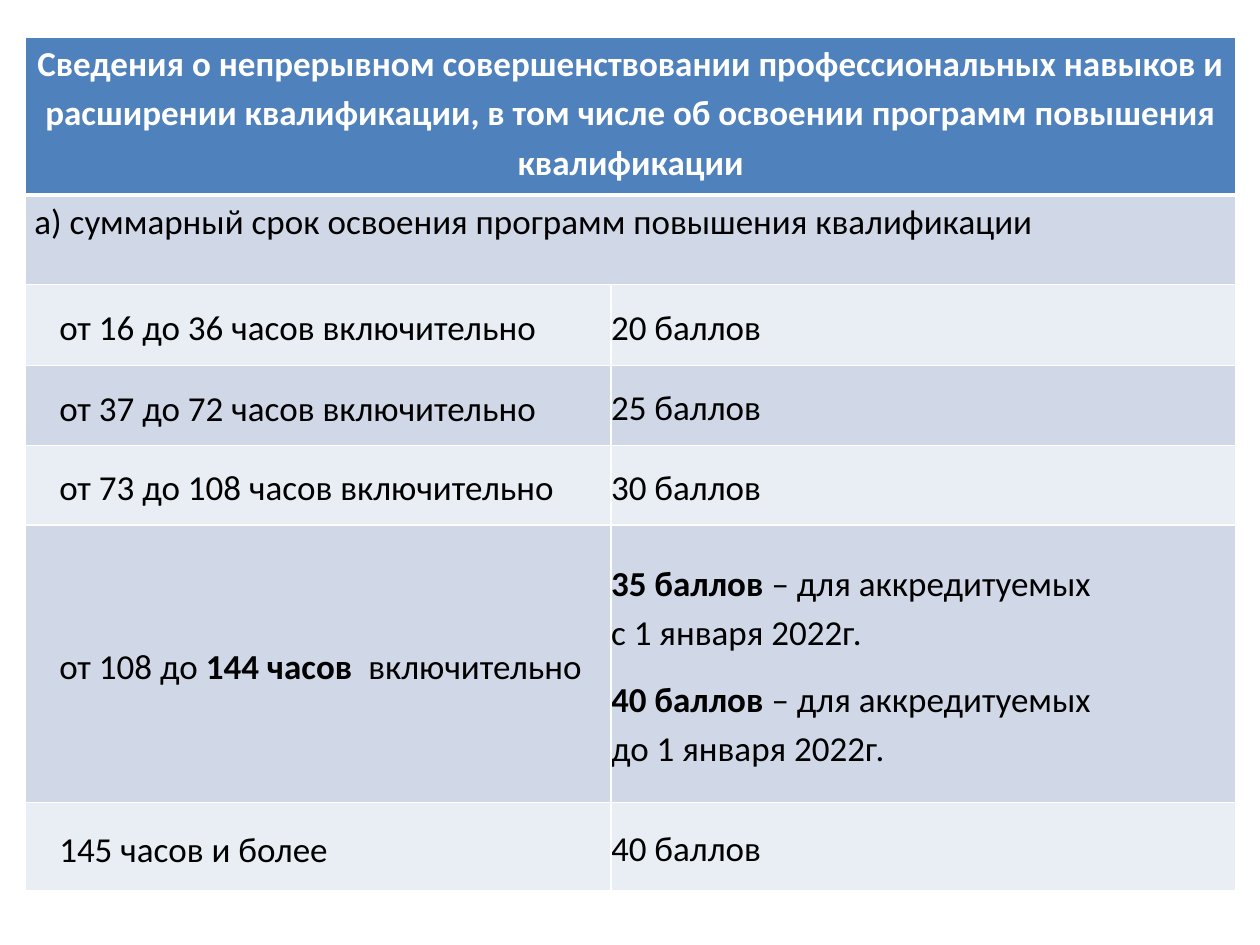
from lxml import etree
from pptx import Presentation
from pptx.dml.color import RGBColor
from pptx.enum.text import MSO_ANCHOR as ANCHOR, PP_ALIGN as ALIGN
from pptx.oxml.ns import qn
from pptx.util import Pt

TITLE = ("Сведения о непрерывном совершенствовании профессиональных навыков и "
         "расширении квалификации, в том числе об освоении программ повышения квалификации")
SUBTITLE = "а)\u00a0суммарный срок освоения программ повышения квалификации"

# Each cell is a list of paragraphs, each paragraph a list of (text, bold) runs.
SCORES = [
    ([[("от 16 до 36 часов включительно", False)]], [[("20 баллов", False)]]),
    ([[("от 37 до 72 часов включительно", False)]], [[("25 баллов", False)]]),
    ([[("от 73 до 108 часов включительно", False)]], [[("30 баллов", False)]]),
    ([[("от 108 до ", False), ("144 часов  ", True), ("включительно", False)]],
     [[("35 баллов ", True), ("– для аккредитуемых\nс 1 января 2022г.", False)],
      [("40 баллов ", True), ("– для аккредитуемых\nдо 1 января 2022г.", False)]]),
    ([[("145 часов и более", False)]], [[("40 баллов", False)]]),
]
COL_WIDTHS = [334.8, 357.2]
ROW_HEIGHTS = [90.5, 51, 46.5, 45.5, 45.5, 158.5, 50.5]
LEFT, TOP = 14.4, 21
PAD = 5.3
WHITE, BLACK, BLUE = "FFFFFF", "000000", "4F81BD"
BANDS = ["E9EDF4", "D0D8E8"]


def rgb(value):
    return RGBColor.from_string(value)


def set_borders(cell, **widths):
    """Draw white borders, 1 pt unless a side is given another width."""
    tc_pr = cell._tc.get_or_add_tcPr()
    for side in "LRTB":
        ln = etree.SubElement(tc_pr, qn(f"a:ln{side}"), w=str(Pt(widths.get(side, 1))))
        fill = etree.SubElement(ln, qn("a:solidFill"))
        etree.SubElement(fill, qn("a:srgbClr"), val=WHITE)


def write(cell, paragraphs, color=BLACK, align=ALIGN.LEFT, anchor=ANCHOR.MIDDLE,
          pad=PAD, top=0, indent=0, after=0):
    cell.margin_left = cell.margin_right = Pt(pad)
    cell.margin_top, cell.margin_bottom = Pt(top), 0
    cell.vertical_anchor = anchor
    tf = cell.text_frame
    for i, runs in enumerate(paragraphs):
        p = tf.add_paragraph() if i else tf.paragraphs[0]
        p.alignment, p.line_spacing, p.space_after = align, 1.15, Pt(after)
        if indent:
            p._p.get_or_add_pPr().set("indent", str(Pt(indent)))
        for text, bold in runs:
            for n, line in enumerate(text.split("\n")):
                if n:
                    p.add_line_break()
                r = p.add_run()
                r.text = line
                r.font.name, r.font.size, r.font.bold = "Calibri", Pt(20), bold
                r.font.color.rgb = rgb(color)


prs = Presentation()
prs.slide_width, prs.slide_height = Pt(720), Pt(540)
s = prs.slides.add_slide(prs.slide_layouts[6])
table = s.shapes.add_table(len(ROW_HEIGHTS), len(COL_WIDTHS), Pt(LEFT), Pt(TOP),
                           Pt(sum(COL_WIDTHS)), Pt(sum(ROW_HEIGHTS))).table
for col, width in zip(table.columns, COL_WIDTHS):
    col.width = Pt(width)

for i, (row, height) in enumerate(zip(table.rows, ROW_HEIGHTS)):
    row.height = Pt(height)
    for cell in row.cells:
        set_borders(cell, **{0: {"B": 3}, 1: {"T": 3}}.get(i, {}))
        cell.fill.solid()
        cell.fill.fore_color.rgb = rgb(BANDS[i % 2] if i else BLUE)

for i in range(2):
    table.cell(i, 0).merge(table.cell(i, 1))
write(table.cell(0, 0), [[(TITLE, True)]], WHITE, ALIGN.CENTER, ANCHOR.TOP)
write(table.cell(1, 0), [[(SUBTITLE, False)]], align=ALIGN.JUSTIFY, anchor=ANCHOR.TOP)

for i, (hours, points) in enumerate(SCORES, start=2):
    write(table.cell(i, 0), hours, top=0.7, indent=14.2)
    write(table.cell(i, 1), points, pad=0, after=10)

prs.save("out.pptx")
